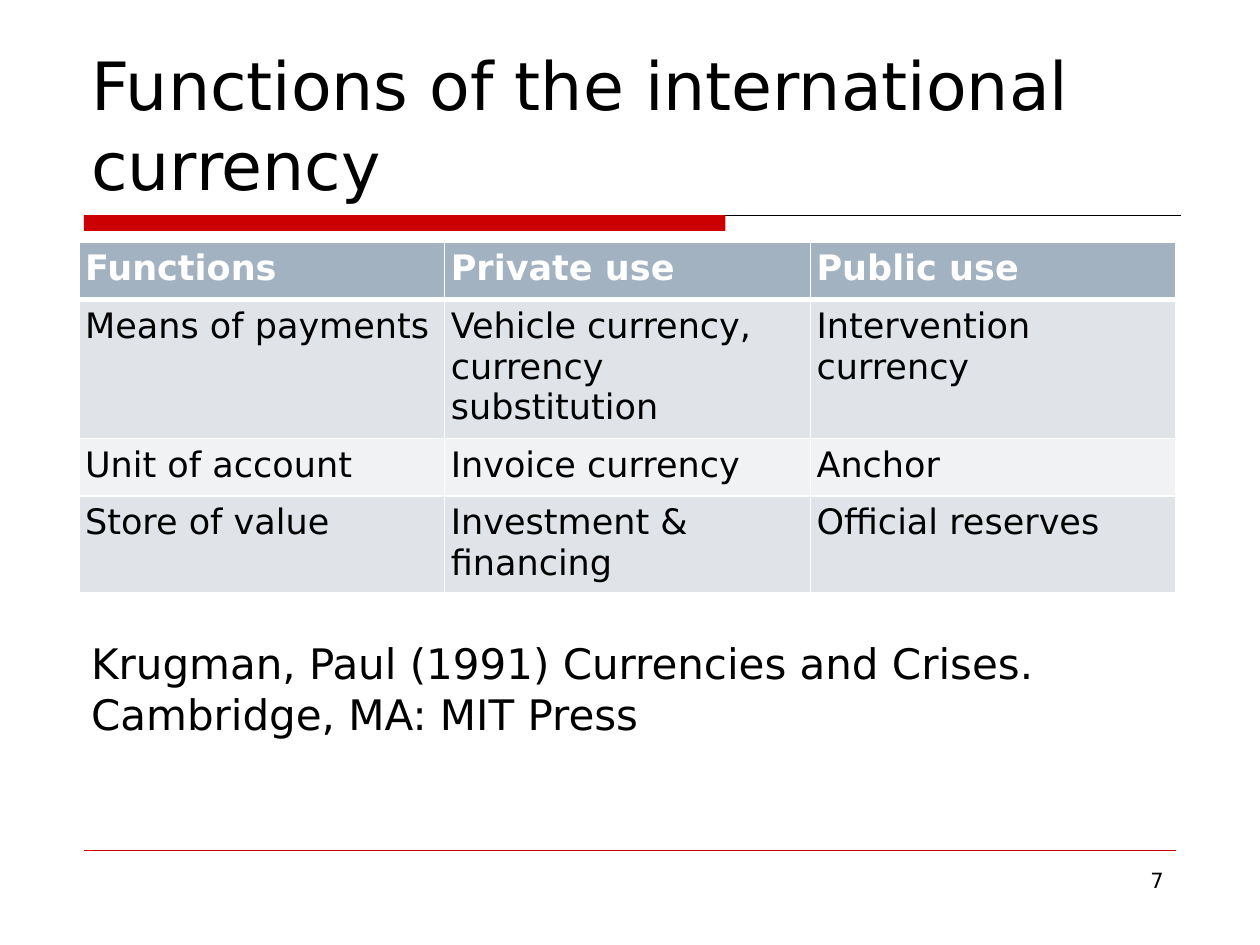
from dataclasses import dataclass

from lxml.etree import SubElement
from pptx import Presentation
from pptx.dml.color import RGBColor as Color
from pptx.enum.shapes import MSO_CONNECTOR as Connector, MSO_SHAPE as Shape
from pptx.enum.text import MSO_ANCHOR as Anchor, PP_ALIGN as Align
from pptx.oxml.ns import qn
from pptx.util import Pt


@dataclass(frozen=True)
class Theme:
    font: str = "DejaVu Sans"
    text: str = "000000"
    white: str = "FFFFFF"
    accent: str = "CC0000"
    header: str = "A3B2C1"
    bands: tuple = ("E0E4E9", "F0F2F4")
    title_size: int = 38
    body_size: int = 24
    table_size: int = 20
    number_size: int = 12


THEME = Theme()
ROWS = [
    ("Functions", "Private use", "Public use"),
    ("Means of payments", "Vehicle currency, currency substitution",
     "Intervention currency"),
    ("Unit of account", "Invoice currency", "Anchor"),
    ("Store of value", "Investment & financing", "Official reserves"),
]
ROW_HEIGHTS = (33, 76.5, 33, 53.5)
COLUMN_WIDTH = 209


def points(*lengths):
    return [Pt(length) for length in lengths]


def write(paragraph, text, size, color=THEME.text, bold=False):
    run = paragraph.add_run()
    run.text = text
    run.font.name = THEME.font
    run.font.size = Pt(size)
    run.font.bold = bold
    run.font.color.rgb = Color.from_string(color)


def add_text(slide, box, text, size, anchor=Anchor.TOP, align=Align.LEFT):
    frame = slide.shapes.add_textbox(*points(*box)).text_frame
    frame.word_wrap = True
    frame.vertical_anchor = anchor
    paragraph = frame.paragraphs[0]
    paragraph.alignment = align
    write(paragraph, text, size)


def add_rule(slide, left, right, y, color, width):
    """Draw a thin horizontal line."""
    rule = slide.shapes.add_connector(
        Connector.STRAIGHT, *points(left, y, right, y))
    rule.line.color.rgb = Color.from_string(color)
    rule.line.width = Pt(width)
    SubElement(rule._element.spPr, qn("a:effectLst"))


def add_bar(slide, box):
    bar = slide.shapes.add_shape(Shape.RECTANGLE, *points(*box))
    bar.shadow.inherit = False
    bar.fill.solid()
    bar.fill.fore_color.rgb = Color.from_string(THEME.accent)
    bar.line.fill.background()


def set_borders(cell, top, bottom):
    properties = cell._tc.get_or_add_tcPr()
    for side, width in (("L", 1), ("R", 1), ("T", top), ("B", bottom)):
        border = SubElement(properties, qn(f"a:ln{side}"), w=str(Pt(width)))
        fill = SubElement(border, qn("a:solidFill"))
        SubElement(fill, qn("a:srgbClr"), val=THEME.white)


def fill_cell(cell, text, row):
    is_header = row == 0
    set_borders(cell, top=3 if row == 1 else 1, bottom=3 if is_header else 1)
    background = THEME.header if is_header else THEME.bands[(row - 1) % 2]
    cell.fill.solid()
    cell.fill.fore_color.rgb = Color.from_string(background)
    cell.margin_left = cell.margin_right = Pt(3.6)
    cell.margin_top = cell.margin_bottom = Pt(3.6)
    write(cell.text_frame.paragraphs[0], text, THEME.table_size,
          THEME.white if is_header else THEME.text, is_header)


def add_functions_table(slide, left, top):
    columns = len(ROWS[0])
    table = slide.shapes.add_table(
        len(ROWS), columns,
        *points(left, top, COLUMN_WIDTH * columns, sum(ROW_HEIGHTS))).table
    for column in table.columns:
        column.width = Pt(COLUMN_WIDTH)
    for index, (texts, height) in enumerate(zip(ROWS, ROW_HEIGHTS)):
        table.rows[index].height = Pt(height)
        for column, text in enumerate(texts):
            fill_cell(table.cell(index, column), text, index)


def main():
    presentation = Presentation()
    presentation.slide_width, presentation.slide_height = points(720, 540)
    slide = presentation.slides.add_slide(presentation.slide_layouts[6])
    add_rule(slide, 48, 674.75, 123, THEME.text, 0.75)
    add_bar(slide, (48, 123, 366.5, 9))
    add_rule(slide, 48, 672, 486, THEME.accent, 0.25)
    add_text(slide, (45, 24, 630, 96), "Functions of the international currency",
             THEME.title_size, anchor=Anchor.BOTTOM)
    add_functions_table(slide, 45, 138.25)
    add_text(slide, (45, 361, 629, 113),
             "Krugman, Paul (1991) Currencies and Crises. Cambridge, MA: MIT Press",
             THEME.body_size)
    add_text(slide, (516, 492, 156, 37.5), "7", THEME.number_size,
             align=Align.RIGHT)
    presentation.save("out.pptx")


if __name__ == "__main__":
    main()
